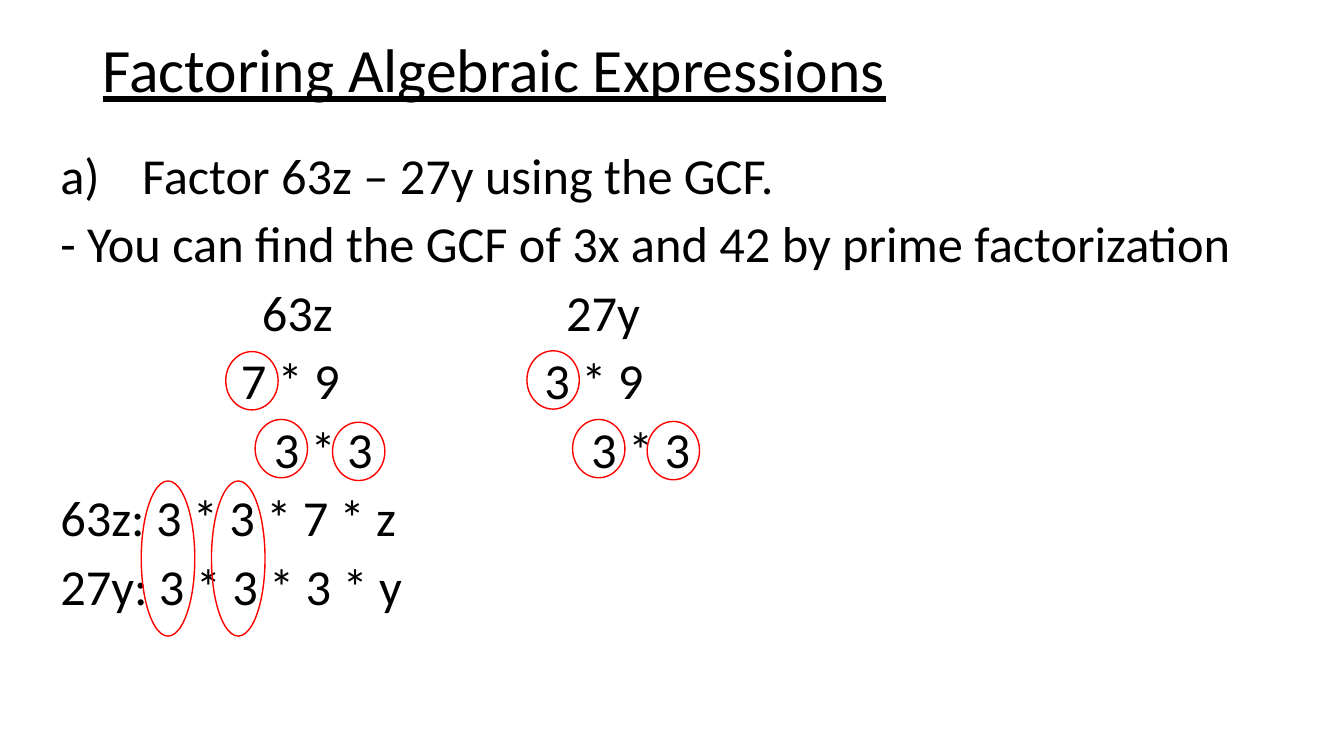
from lxml import etree
from pptx import Presentation
from pptx.dml.color import RGBColor
from pptx.enum import shapes, text
from pptx.oxml import ns
from pptx.util import Cm, Pt

BLACK = RGBColor(0x00, 0x00, 0x00)
RED = RGBColor(0xFF, 0x00, 0x00)

LINES = [
    ("Factor 63z – 27y using the GCF.", []),
    ("- You can find the GCF of 3x and 42 by prime factorization", []),
    ("\t63z\t27y", [5.08, 12.75]),
    ("\t7 * 9\t3 * 9", [4.55, 12.2]),
    ("\t3 * 3\t3 * 3", [5.38, 13.38]),
    ("63z: 3 * 3 * 7 * z", []),
    ("27y: 3 * 3 * 3 * y", []),
]
SMALL, TALL = (1.32, 1.47), (1.35, 3.91)
RINGS = {
    SMALL: [(5.69, 8.86), (13.28, 8.84), (6.43, 10.57), (8.38, 10.64),
            (14.43, 10.57), (16.31, 10.62)],
    TALL: [(3.56, 12.12), (5.33, 12.12)],
}


def style(item, values):
    """Set each named attribute of an item."""
    for name, value in values.items():
        setattr(item, name, value)


def add_box(slide, place, anchor):
    """Add a wrapping text box and return its frame."""
    frame = slide.shapes.add_textbox(*map(Cm, place)).text_frame
    style(frame, {"word_wrap": True, "vertical_anchor": anchor})
    return frame


def write(para, words, size, line=False):
    """Write one run of black text."""
    para.line_spacing = 0.9
    run = para.add_run()
    run.text = words
    style(run.font, {"name": "Calibri", "size": Pt(size), "underline": line})
    run.font.color.rgb = BLACK


def add_mark(para):
    """Give a paragraph a lettered mark with a hanging indent."""
    props = para._p.get_or_add_pPr()
    props.set("marL", str(Cm(2.06)))
    props.set("indent", str(-Cm(2.06)))
    etree.SubElement(props, ns.qn("a:buAutoNum"), type="alphaLcParenR")


def add_tabs(para, stops):
    """Add left tab stops to a paragraph."""
    tabs = etree.SubElement(para._p.get_or_add_pPr(), ns.qn("a:tabLst"))
    for stop in stops:
        etree.SubElement(tabs, ns.qn("a:tab"), pos=str(Cm(stop)), algn="l")


def add_body(slide):
    """Add the worked steps."""
    frame = add_box(slide, (1.27, 3.68, 31.34, 15.37), text.MSO_ANCHOR.TOP)
    for row, (words, stops) in enumerate(LINES):
        para = frame.add_paragraph() if row else frame.paragraphs[0]
        if row:
            para.space_before = Pt(10)
        else:
            add_mark(para)
        if stops:
            add_tabs(para, stops)
        write(para, words, 36)


def add_ring(slide, spot, size):
    """Add an open red ellipse around a factor."""
    ring = slide.shapes.add_shape(shapes.MSO_SHAPE.OVAL, *map(Cm, spot + size))
    ring.shadow.inherit = False
    ring.fill.background()
    ring.line.color.rgb = RED
    ring.line.width = Pt(1)


def main():
    """Build the slide and save it."""
    deck = Presentation()
    style(deck, {"slide_width": Cm(33.87), "slide_height": Cm(19.05)})
    slide = deck.slides.add_slide(deck.slide_layouts[6])
    title = add_box(slide, (2.34, 0, 31.34, 3.68), text.MSO_ANCHOR.MIDDLE)
    write(title.paragraphs[0], "Factoring Algebraic Expressions", 44, True)
    add_body(slide)
    for size, spots in RINGS.items():
        for spot in spots:
            add_ring(slide, spot, size)
    deck.save("out.pptx")


if __name__ == "__main__":
    main()
